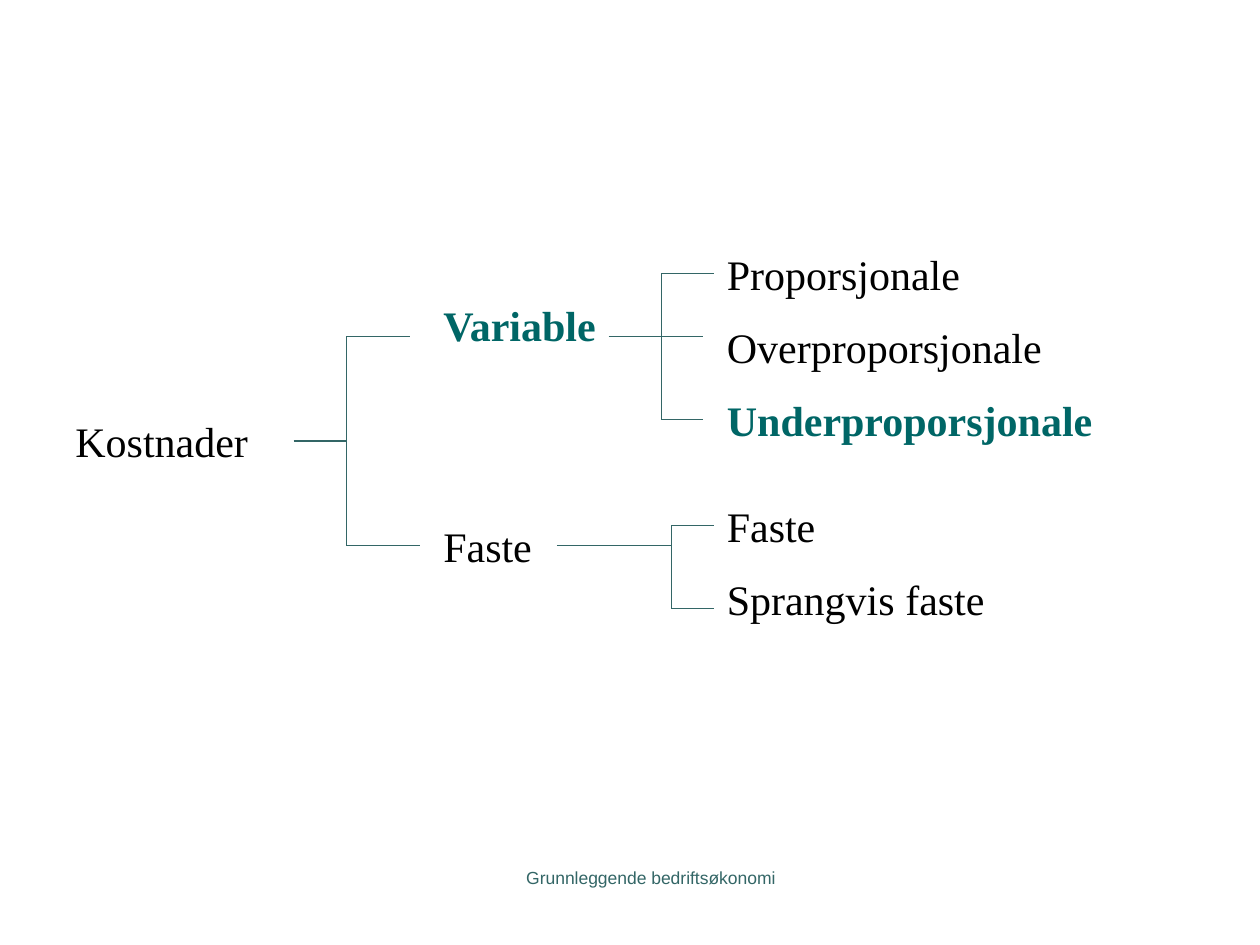
import pptx
import pptx.dml.color
import pptx.enum.shapes
import pptx.enum.text
import pptx.oxml
import pptx.util
from pptx.util import Inches

BLACK, TEAL, LINE = "000000", "006666", "336666"
LABEL_HEIGHT = 0.5

# text, left, top, width, highlighted
LABELS = [
    ("Kostnader", 0.5, 3.25, 1.75, False),
    ("Variable", 3.42, 2.33, 2, True),
    ("Faste", 3.42, 4.08, 1.75, False),
    ("Proporsjonale", 5.67, 1.92, 2.5, False),
    ("Overproporsjonale", 5.67, 2.5, 2.92, False),
    ("Underproporsjonale", 5.67, 3.08, 3.42, True),
    ("Faste", 5.67, 3.92, 1.92, False),
    ("Sprangvis faste", 5.67, 4.5, 2.67, False),
]

# The stem is (start x, end x, y); each branch is (y, end x).
BRACKETS = [
    {"stem": (2.33, 2.75, 3.5), "trunk": 2.75, "branches": [(2.67, 3.25), (4.33, 3.33)]},
    {"stem": (4.83, 5.58, 2.67), "trunk": 5.25, "branches": [(2.17, 5.67), (3.33, 5.58)]},
    {"stem": (4.42, 5.33, 4.33), "trunk": 5.33, "branches": [(4.17, 5.67), (4.83, 5.67)]},
]


def rgb(value):
    return pptx.dml.color.RGBColor.from_string(value)


def add_text(slide, text, left, top, width, *, size=24, font="Times New Roman",
             color=BLACK, bold=False, align=pptx.enum.text.PP_ALIGN.LEFT):
    box = slide.shapes.add_textbox(
        Inches(left), Inches(top), Inches(width), Inches(LABEL_HEIGHT))
    box.text_frame.word_wrap = True
    paragraph = box.text_frame.paragraphs[0]
    paragraph.alignment = align
    run = paragraph.add_run()
    run.text = text
    run.font.size = pptx.util.Pt(size)
    run.font.name = font
    run.font.bold = bold
    run.font.color.rgb = rgb(color)


def add_line(slide, x1, y1, x2, y2):
    line = slide.shapes.add_connector(
        pptx.enum.shapes.MSO_CONNECTOR.STRAIGHT,
        Inches(x1), Inches(y1), Inches(x2), Inches(y2))
    line.line.color.rgb = rgb(LINE)
    line.line.width = pptx.util.Pt(0.75)
    line._element.spPr.append(pptx.oxml.parse_xml(
        '<a:effectLst xmlns:a="http://schemas.openxmlformats.org/drawingml/2006/main"/>'))


def add_bracket(slide, stem, trunk, branches):
    start, end, stem_y = stem
    add_line(slide, start, stem_y, end, stem_y)
    add_line(slide, trunk, branches[0][0], trunk, branches[-1][0])
    for y, branch_end in branches:
        add_line(slide, trunk, y, branch_end, y)


def main():
    presentation = pptx.Presentation()
    presentation.slide_width = Inches(10)
    presentation.slide_height = Inches(7.5)
    slide = presentation.slides.add_slide(presentation.slide_layouts[6])

    for bracket in BRACKETS:
        add_bracket(slide, **bracket)
    for text, left, top, width, highlighted in LABELS:
        add_text(slide, text, left, top, width, bold=highlighted,
                 color=TEAL if highlighted else BLACK)
    add_text(slide, "Grunnleggende bedriftsøkonomi", 3.58, 6.83, 3.17, size=10,
             font="Arial", color=LINE, align=pptx.enum.text.PP_ALIGN.CENTER)

    presentation.save("out.pptx")


if __name__ == "__main__":
    main()
